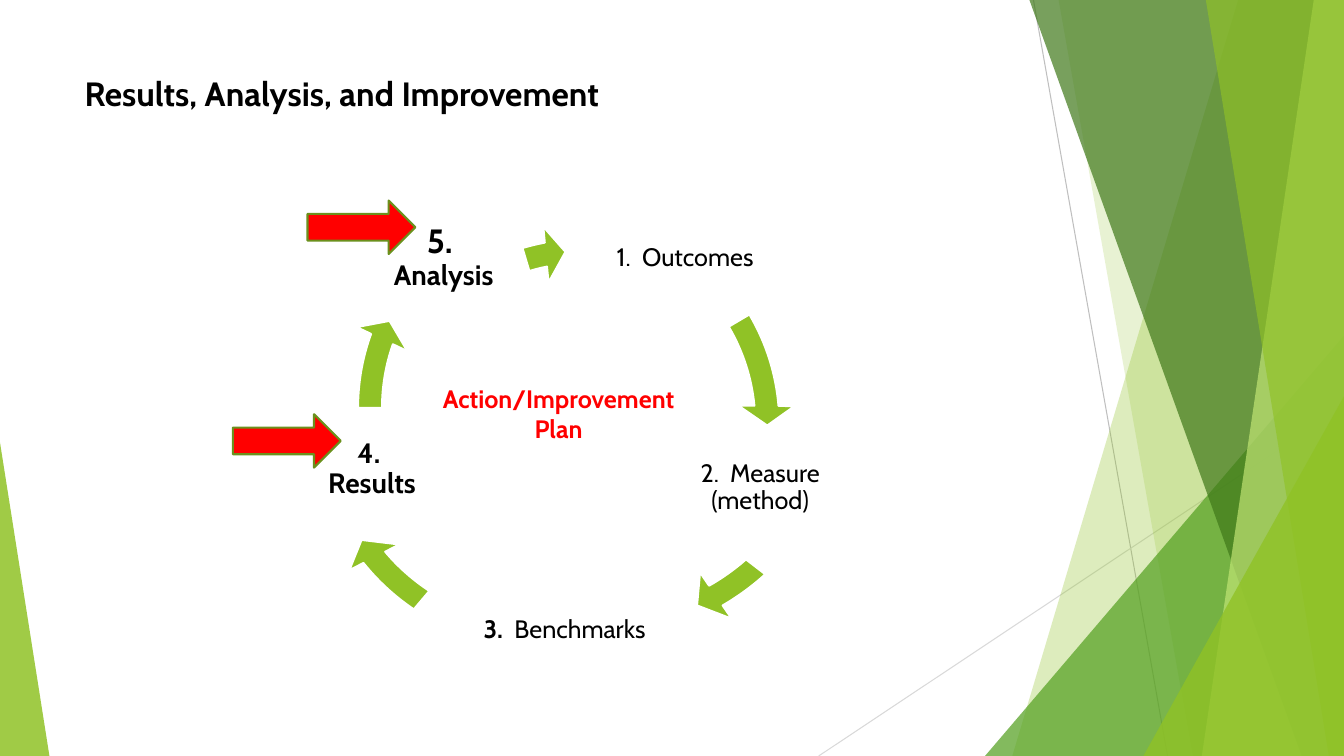
from pptx import Presentation
from pptx.dml.color import RGBColor as RGB
from pptx.enum.shapes import MSO_CONNECTOR as Conn, MSO_SHAPE as Geo
from pptx.enum.text import MSO_ANCHOR as Anchor, PP_ALIGN as Align
from pptx.oxml.ns import qn
from pptx.util import Inches, Pt
from lxml.etree import SubElement as Sub

HUES = {
    "lime": "90C226", "green": "54A021", "dark": "3F7819", "pale": "C0E474",
    "gray": "BFBFBF", "mist": "D9D9D9", "red": "FF0000", "olive": "6B901C",
    "black": "000000", "white": "FFFFFF",
}
WIDE, HIGH = 13.33, 7.5


class Deck:
    font = "Cabin"

    def __init__(self):
        self.prs = Presentation()
        self.prs.slide_width, self.prs.slide_height = Inches(WIDE), Inches(HIGH)
        self.slide = self.prs.slides.add_slide(self.prs.slide_layouts[6])
        self.shapes = self.slide.shapes

    def hue(self, name):
        return RGB.from_string(HUES[name])

    def paint(self, shape, fill, alpha=100, line=None):
        shape.shadow.inherit = False
        shape.fill.solid()
        shape.fill.fore_color.rgb = self.hue(fill)
        if alpha < 100:
            tint = shape.fill._xPr.find(qn("a:solidFill"))[0]
            Sub(tint, qn("a:alpha")).set("val", str(alpha * 1000))
        if line:
            shape.line.color.rgb = self.hue(line)
            shape.line.width = Pt(1.5)
        else:
            shape.line.fill.background()

    def rule(self, x1, y1, x2, y2, color):
        rule = self.shapes.add_connector(
            Conn.STRAIGHT, Inches(x1), Inches(y1), Inches(x2), Inches(y2))
        rule.line.color.rgb = self.hue(color)
        rule.line.width = Pt(0.75)
        Sub(rule._element.spPr, qn("a:effectLst"))

    def band(self, top, foot, color, alpha):
        """Fill from a slanted left edge to the right side of the slide."""
        pts = [(Inches(x), Inches(y)) for x, y in
               ((top, 0), (WIDE, 0), (WIDE, HIGH), (foot, HIGH))]
        form = self.shapes.build_freeform(*pts[0])
        form.add_line_segments(pts[1:], close=True)
        self.paint(form.convert_to_shape(), color, alpha)

    def shape(self, kind, box, color, adj=(), alpha=100, line=None):
        shape = self.shapes.add_shape(kind, *map(Inches, box))
        for i, val in enumerate(adj):
            shape.adjustments[i] = val
        self.paint(shape, color, alpha, line)

    def wedge(self, box, color, alpha, tip=1):
        self.shape(Geo.ISOSCELES_TRIANGLE, box, color, [tip], alpha)

    def arc(self, box, end, start):
        self.shape(Geo.CIRCULAR_ARROW, box, "lime",
                   [0.052, 3.357, end, start, 0.061], line="white")

    def text(self, box, runs, color="black", align=Align.CENTER,
             anchor=Anchor.TOP, inset=None, space=None):
        """Each run is (words, size, bold)."""
        frame = self.shapes.add_textbox(*map(Inches, box)).text_frame
        frame.word_wrap = True
        frame.vertical_anchor = anchor
        if inset is not None:
            frame.margin_left = frame.margin_right = Inches(inset)
            frame.margin_top = frame.margin_bottom = Inches(inset)
        para = frame.paragraphs[0]
        para.alignment = align
        if space:
            para.line_spacing = space
        for words, size, bold in runs:
            run = para.add_run()
            run.text = words
            run.font.name, run.font.size = self.font, Pt(size)
            run.font.bold = bold
            run.font.color.rgb = self.hue(color)

    def step(self, box, *runs):
        self.text(box, runs, anchor=Anchor.MIDDLE, inset=0.03, space=0.9)


def main():
    deck = Deck()

    # Backdrop
    deck.rule(10.25, 0, 11.58, HIGH, "gray")
    deck.rule(WIDE, 4.03, 8.12, HIGH, "mist")
    deck.band(12.28, 10.04, "lime", 30)
    deck.band(10.5, 11.83, "lime", 20)
    deck.wedge((9.77, 3.33, 3.56, 4.17), "green", 72)
    deck.band(10.21, 12.91, "dark", 70)
    deck.band(13.03, 11.92, "pale", 70)
    deck.band(11.96, 13.18, "lime", 65)
    deck.wedge((11.34, 3.93, 1.99, 3.57), "lime", 80)
    deck.wedge((0, 4.39, 0.49, 3.11), "lime", 85, tip=0)

    # Title
    deck.text((0.74, 0.67, 9.4, 0.71),
              [("Results, Analysis, and Improvement", 24, True)],
              align=Align.LEFT)

    # Cycle steps
    deck.step((5.41, 1.95, 2.77, 1.22), ("1.  Outcomes", 18, False))
    deck.step((6.46, 4.23, 2.16, 1.22), ("2.  Measure (method)", 18, False))
    deck.step((4.45, 5.46, 2.3, 1.58),
              ("3.  ", 18, True), ("Benchmarks", 18, False))
    deck.step((3.08, 4.05, 1.22, 1.22), ("4.  Results", 20, True))
    deck.step((3.79, 1.95, 1.22, 1.22),
              ("5.  ", 24, True), ("Analysis", 20, True))

    # Cycle arrows: box, end angle, start angle
    for box, end, start in (
        ((3.3, 1.91, 4.59, 4.59), 212.94, 197.66),
        ((3.01, 1.96, 5.41, 4.59), 30.02, 22.53),
        ((3, 2.05, 5.09, 4.59), 88.27, 78.16),
        ((3.39, 1.75, 4.59, 4.59), 119.84, 107.96),
        ((3.5, 2.21, 4.59, 4.59), 155.46, 151.98),
    ):
        deck.arc(box, end, start)

    # Red pointers
    for x, y in ((3.05, 1.99), (2.31, 4.11)):
        deck.shape(Geo.RIGHT_ARROW, (x, y, 1.07, 0.53), "red", line="olive")

    # Centre label
    deck.text((4.12, 3.75, 2.84, 0.71),
              [("Action/Improvement Plan", 18, True)], "red")

    deck.prs.save("out.pptx")


if __name__ == "__main__":
    main()
